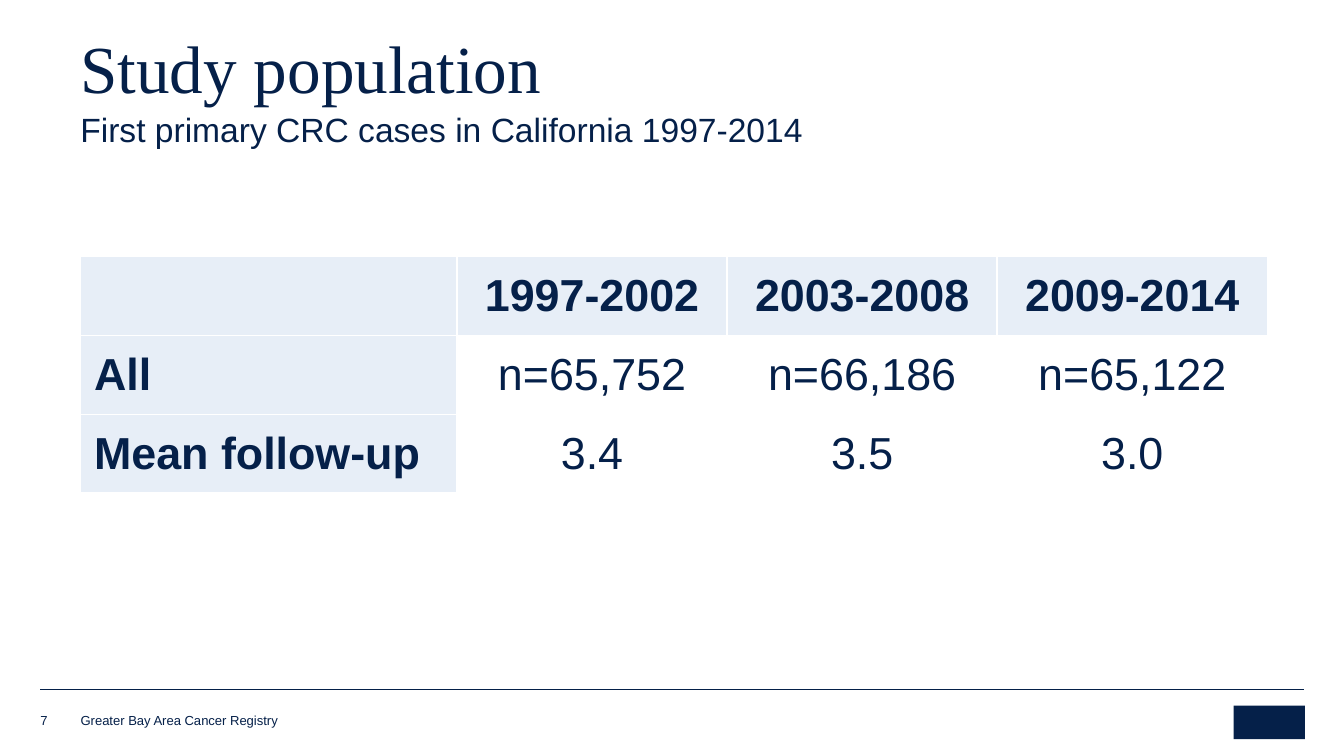
from dataclasses import dataclass

import lxml.etree
import pptx
import pptx.dml.color
import pptx.enum.shapes
import pptx.enum.text
import pptx.oxml.ns
import pptx.util

ANCHOR = pptx.enum.text.MSO_ANCHOR
ALIGN = pptx.enum.text.PP_ALIGN


@dataclass(frozen=True)
class Theme:
    navy = pptx.dml.color.RGBColor.from_string("052049")
    pale = pptx.dml.color.RGBColor.from_string("E7EEF7")
    border = "FFFFFF"
    serif = "Times New Roman"
    sans = "Arial"
    title_size = 36
    subtitle_size = 18
    table_size = 24
    footer_size = 7


class SlideBuilder:
    """Places elements on a grid of 0.1 inch columns and rows."""

    CELL = 0.1

    def __init__(self, slide, theme):
        self.slide = slide
        self.theme = theme

    def grid(self, *units):
        return [pptx.util.Inches(unit * self.CELL) for unit in units]

    def style(self, paragraph, size, face=None, bold=False, **layout):
        font_format = {"name": face or self.theme.sans,
                       "size": pptx.util.Pt(size), "bold": bold}
        for key, value in layout.items():
            setattr(paragraph, key, value)
        for key, value in font_format.items():
            setattr(paragraph.font, key, value)
        paragraph.font.color.rgb = self.theme.navy

    def text(self, wording, place, size, face=None, anchor=ANCHOR.BOTTOM,
             insets=(0, 0), **layout):
        frame = self.slide.shapes.add_textbox(*self.grid(*place)).text_frame
        side, end = self.grid(*insets)
        frame_format = {"word_wrap": True, "vertical_anchor": anchor,
                        "margin_left": side, "margin_right": side,
                        "margin_top": end, "margin_bottom": end}
        for key, value in frame_format.items():
            setattr(frame, key, value)
        frame.text = wording
        self.style(frame.paragraphs[0], size, face, **layout)

    def rule(self, start, end, weight):
        rule = self.slide.shapes.add_connector(
            pptx.enum.shapes.MSO_CONNECTOR.STRAIGHT, *self.grid(*start, *end))
        rule.line.color.rgb = self.theme.navy
        rule.line.width = pptx.util.Pt(weight)
        lxml.etree.SubElement(rule._element.spPr,
                              pptx.oxml.ns.qn("a:effectLst"))

    def block(self, place):
        block = self.slide.shapes.add_shape(
            pptx.enum.shapes.MSO_SHAPE.RECTANGLE, *self.grid(*place))
        block.shadow.inherit = False
        block.fill.solid()
        block.fill.fore_color.rgb = self.theme.navy
        block.line.fill.background()

    def cell_borders(self, cell, weight):
        qn = pptx.oxml.ns.qn
        properties = cell._tc.get_or_add_tcPr()
        for side in ("a:lnL", "a:lnR", "a:lnT", "a:lnB"):
            edge = lxml.etree.SubElement(properties, qn(side),
                                         w=str(pptx.util.Pt(weight)))
            fill = lxml.etree.SubElement(edge, qn("a:solidFill"))
            lxml.etree.SubElement(fill, qn("a:srgbClr"),
                                  val=self.theme.border)

    def table(self, records, left, top, widths, row_height):
        place = (left, top, sum(widths), row_height * len(records))
        table = self.slide.shapes.add_table(
            len(records), len(widths), *self.grid(*place)).table
        table.first_row = table.horz_banding = False
        for column, width in zip(table.columns, self.grid(*widths)):
            column.width = width
        for r, record in enumerate(records):
            for c, wording in enumerate(record):
                cell = table.cell(r, c)
                heading = r == 0 or c == 0
                self.cell_borders(cell, 1)
                if heading:
                    cell.fill.solid()
                    cell.fill.fore_color.rgb = self.theme.pale
                else:
                    cell.fill.background()
                cell.vertical_anchor = ANCHOR.MIDDLE
                cell.text = wording
                self.style(cell.text_frame.paragraphs[0],
                           self.theme.table_size, bold=heading,
                           alignment=ALIGN.CENTER if c else ALIGN.LEFT)


def main():
    deck = pptx.Presentation()
    # Widescreen, 16 to 9
    deck.slide_width = pptx.util.Inches(10)
    deck.slide_height = deck.slide_width * 9 // 16
    theme = Theme()
    page = SlideBuilder(deck.slides.add_slide(deck.slide_layouts[6]), theme)

    # Footer
    page.rule((3, 51.3), (97, 51.3), 0.25)
    page.block((91.8, 52.5, 5.3, 2.5))
    page.text("Greater Bay Area Cancer Registry", (6, 53.1, 47.1, 1.1),
              theme.footer_size)
    page.text("7", (3, 52.9, 2.7, 1.3), theme.footer_size)

    # Heading
    page.text("Study population", (5, 3.5, 89.4, 5), theme.title_size,
              theme.serif, insets=(1, 0.5), line_spacing=0.85)
    page.text("First primary CRC cases in California 1997-2014",
              (5, 7.6, 89.3, 3.7), theme.subtitle_size, anchor=ANCHOR.TOP,
              insets=(1, 0.5), space_after=pptx.util.Pt(6))

    # Cases and follow-up by period
    population = [
        ("", "1997-2002", "2003-2008", "2009-2014"),
        ("All", "n=65,752", "n=66,186", "n=65,122"),
        ("Mean follow-up", "3.4", "3.5", "3.0"),
    ]
    page.table(population, 6, 19.1, [28] + [20.1] * 3, 5.87)

    deck.save("out.pptx")


if __name__ == "__main__":
    main()
